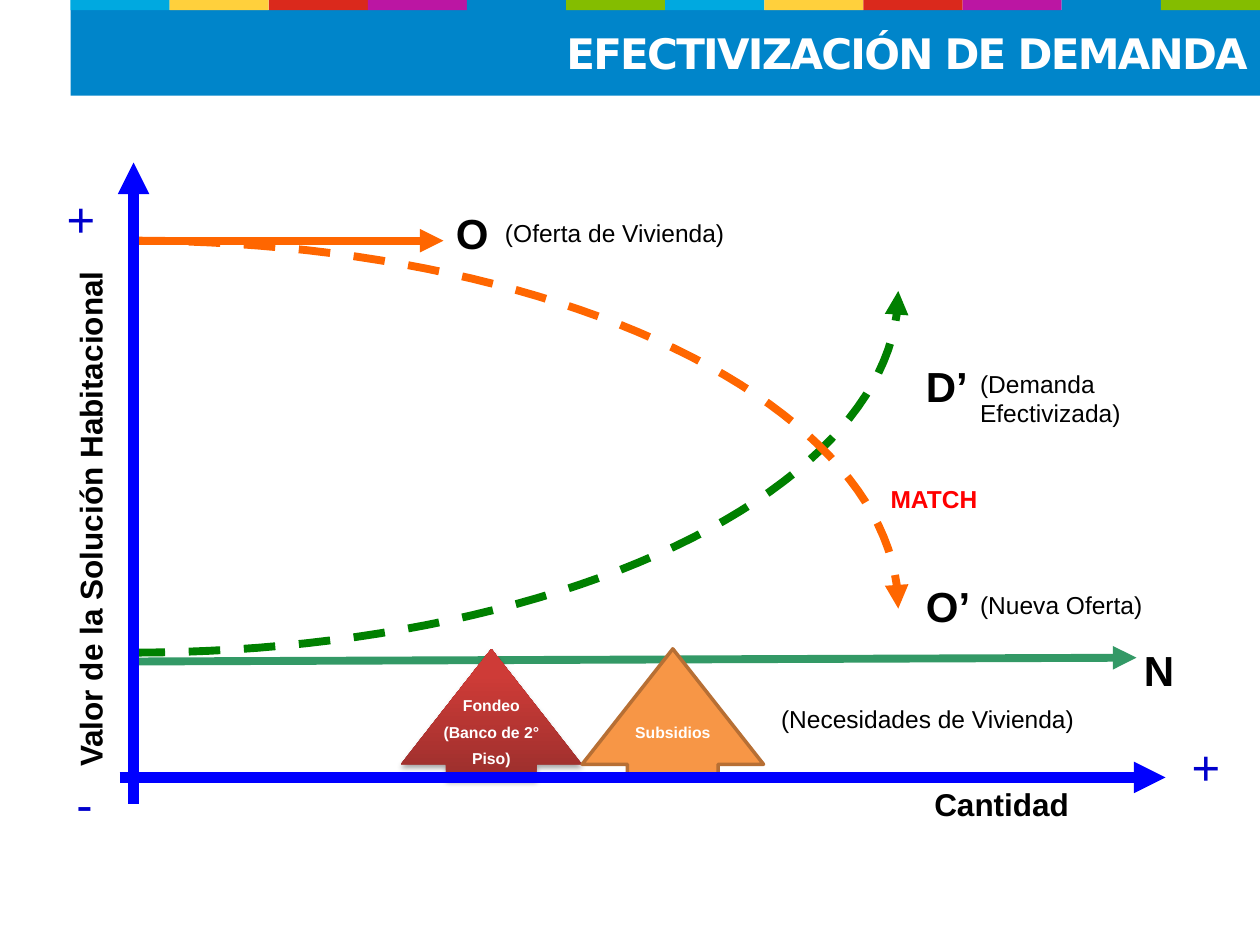
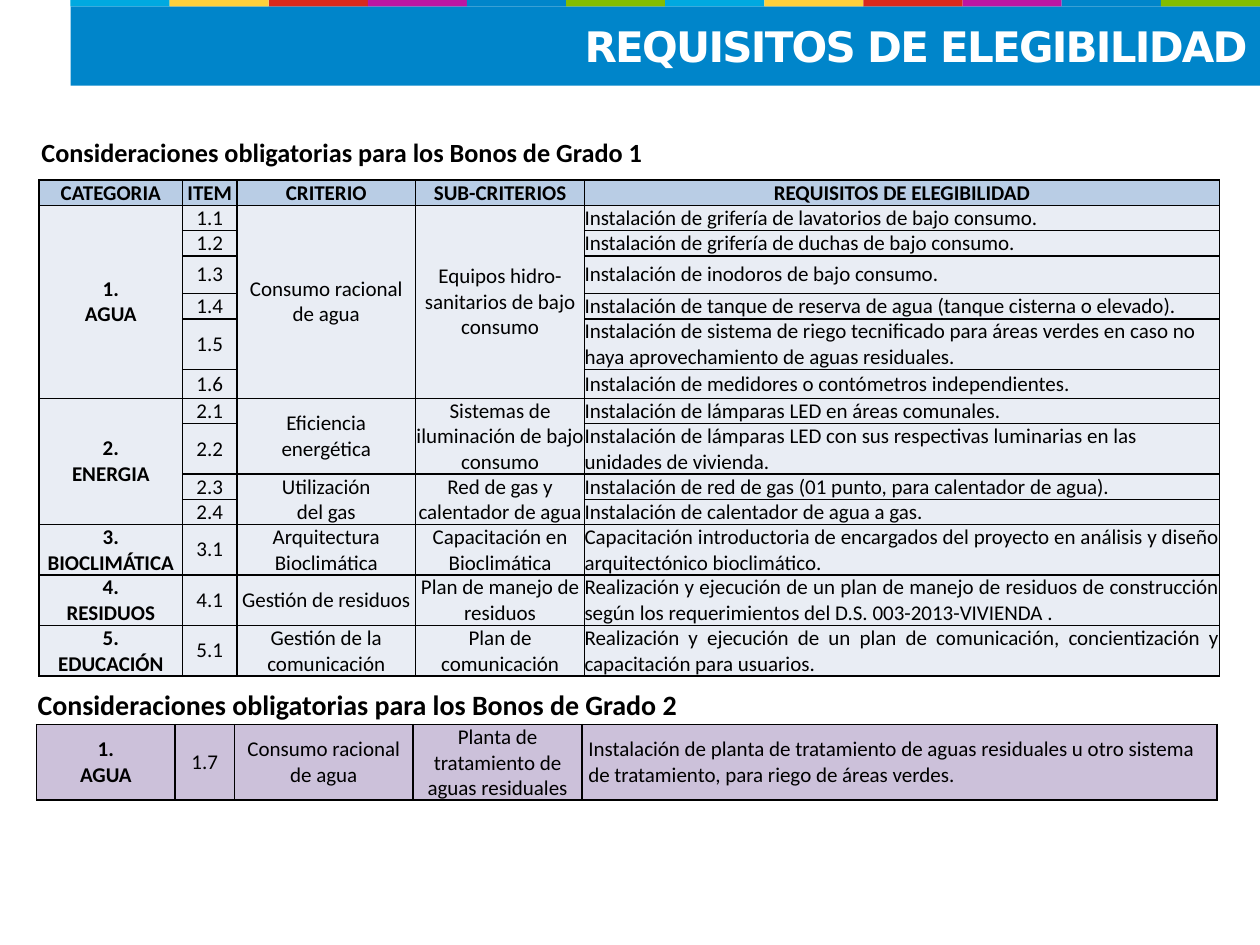
from math import cos, sin, pi
from lxml.etree import SubElement as Sub
from pptx import Presentation
from pptx.dml.color import RGBColor as Rgb
from pptx.enum.dml import MSO_LINE as Dash
from pptx.enum.shapes import MSO_CONNECTOR as Link, MSO_SHAPE as Kind
from pptx.enum.text import MSO_ANCHOR as Anchor, MSO_AUTO_SIZE as Fit, PP_ALIGN as Align
from pptx.oxml import parse_xml
from pptx.oxml.ns import qn, nsdecls
from pptx.util import Inches, Pt

BLUE, BLACK, WHITE = "0085CA", "000000", "FFFFFF"
BANDS = ["00A9E0", "FFD03C", "DA291C", "BB16A3", BLUE, "84BD00"] * 2
EDGE = 0.56
LEFT, CENTER, JUST = Align.LEFT, Align.CENTER, Align.JUSTIFY

# Slide 1: demand chart
ORIGIN = 1.06
AXIS, GREEN, ORANGE = "0000FF", "008000", "FF6600"
CURVES = [(5.18, 2.31, GREEN), (1.91, 4.83, ORANGE)]  # start y, end y, colour
TREND = [
    ((ORIGIN, 5.25), (9.02, 5.22), "339966", 4.5),
    ((ORIGIN, 1.91), (3.52, 1.91), ORANGE, 4.5),
    ((ORIGIN, 6.38), (ORIGIN, 1.29), AXIS, 6),
]
BASE = ((0.95, 6.17), (9.25, 6.17), AXIS, 6)
LETTER = dict(size=24, bold=True)
NOTE = dict(size=14)
SIGN = dict(size=28, color="0000CC")
NAME = dict(size=18, bold=True, align=CENTER)
LABELS = [
    ("O", (3.52, 1.6, 0.47, 0.5), LETTER),
    ("N", (8.98, 5.07, 0.47, 0.5), LETTER),
    ("D’", (7.25, 2.81, 0.58, 0.5), LETTER),
    ("O’", (7.25, 4.56, 0.58, 0.5), LETTER),
    ("(Oferta de Vivienda)", (3.91, 1.68, 5.53, 0.34), NOTE),
    ("(Necesidades de Vivienda)", (6.1, 5.54, 2.99, 0.34), NOTE),
    ("(Demanda Efectivizada)", (7.68, 2.88, 1.92, 0.57), NOTE),
    ("(Nueva Oferta)", (7.68, 4.63, 2.08, 0.34), NOTE),
    ("MATCH", (6.97, 3.79, 1.26, 0.34), dict(size=14, bold=True, color="FF0000")),
    ("+", (0.43, 1.45, 0.48, 0.57), SIGN),
    ("-", (0.43, 6.09, 0.48, 0.57), dict(SIGN, align=CENTER)),
    ("+", (9.36, 5.8, 0.48, 0.57), SIGN),
    ("Cantidad", (6.68, 6.18, 2.54, 0.4), NAME),
    ("Valor de la Solución Habitacional", (-1.81, 3.92, 5.05, 0.4), dict(NAME, turn=270)),
]
FUNDS, GRANTS = "Fondeo\n(Banco de 2°\nPiso)", "Subsidios"

# Slide 2: tables; an empty cell continues the one above it
HEADS = ["Consideraciones obligatorias para los Bonos de Grado 1",
         "Consideraciones obligatorias para los Bonos de Grado 2"]
GRADE1 = [
    ("CATEGORIA", "ITEM", "CRITERIO", "SUB-CRITERIOS", "REQUISITOS DE ELEGIBILIDAD"),
    ("1.\nAGUA", "1.1", "Consumo racional de agua",
     "Equipos hidro-sanitarios de bajo consumo",
     "Instalación de grifería de lavatorios de bajo consumo."),
    ("", "1.2", "", "", "Instalación de grifería de duchas de bajo consumo."),
    ("", "1.3", "", "", "Instalación de inodoros de bajo consumo."),
    ("", "1.4", "", "",
     "Instalación de tanque de reserva de agua (tanque cisterna o elevado)."),
    ("", "1.5", "", "", "Instalación de sistema de riego tecnificado para áreas verdes "
     "en caso no haya aprovechamiento de aguas residuales."),
    ("", "1.6", "", "", "Instalación de medidores o contómetros independientes."),
    ("2.\nENERGIA", "2.1", "Eficiencia\nenergética",
     "Sistemas de iluminación de bajo consumo",
     "Instalación de lámparas LED en áreas comunales."),
    ("", "2.2", "", "", "Instalación de lámparas LED con sus respectivas luminarias "
     "en las unidades de vivienda."),
    ("", "2.3", "Utilización\ndel gas", "Red de gas y calentador de agua",
     "Instalación de red de gas (01 punto, para calentador de agua)."),
    ("", "2.4", "", "", "Instalación de calentador de agua a gas."),
    ("3.\nBIOCLIMÁTICA", "3.1", "Arquitectura Bioclimática", "Capacitación en Bioclimática",
     "Capacitación introductoria de encargados del proyecto en análisis y diseño "
     "arquitectónico bioclimático."),
    ("4.\nRESIDUOS", "4.1", "Gestión de residuos", "Plan de manejo de residuos",
     "Realización y ejecución de un plan de manejo de residuos de construcción según los "
     "requerimientos del D.S. 003-2013-VIVIENDA ."),
    ("5.\nEDUCACIÓN", "5.1", "Gestión de la comunicación", "Plan de comunicación",
     "Realización y ejecución de un plan de comunicación, concientización y capacitación "
     "para usuarios."),
]
HIGH1 = [0.2, 0.2, 0.2, 0.3, 0.2, 0.4, 0.23, 0.2, 0.4, 0.2, 0.2, 0.4, 0.4, 0.4]
WIDE1 = [1.14, 0.43, 1.42, 1.34, 5.04]
GRADE2 = [
    ("1.\nAGUA", "1.7", "Consumo racional de agua",
     "Planta de tratamiento de aguas residuales",
     "Instalación de planta de tratamiento de aguas residuales u otro sistema de "
     "tratamiento, para riego de áreas verdes."),
]
WIDE2 = [1.1, 0.47, 1.42, 1.34, 5.04]


def rgb(code):
    return Rgb.from_string(code)


def inch(vals):
    return [Inches(v) for v in vals]


def style(frame, size, color=BLACK, bold=False, align=LEFT, font="Arial"):
    for para in frame.paragraphs:
        para.alignment = align
        for run in para.runs:
            run.font.size, run.font.bold, run.font.name = Pt(size), bold, font
            run.font.color.rgb = rgb(color)


def paint(shape, color):
    shape.fill.solid()
    shape.fill.fore_color.rgb = rgb(color)


def block(slide, kind, at, color):
    shape = slide.shapes.add_shape(kind, *inch(at))
    shape.shadow.inherit = False
    paint(shape, color)
    shape.line.fill.background()
    return shape


def label(slide, text, at, turn=0, **look):
    box = slide.shapes.add_textbox(*inch(at))
    box.rotation = turn
    box.text_frame.word_wrap = True
    box.text_frame.text = text
    style(box.text_frame, **look)


def start(deck, text, top, high):
    """Add a slide with the colour strip and the title bar below it."""
    slide = deck.slides.add_slide(deck.slide_layouts[5])
    step = (10 - EDGE) / len(BANDS)
    for i, color in enumerate(BANDS):
        block(slide, Kind.RECTANGLE, (EDGE + i * step, 0, step, top), color)
    title = slide.shapes.title
    title.left, title.top, title.width, title.height = inch((EDGE, top, 10 - EDGE, high))
    paint(title, BLUE)
    frame = title.text_frame
    frame.text = text
    frame.auto_size, frame.vertical_anchor = Fit.NONE, Anchor.MIDDLE
    style(frame, 24, WHITE, True, Align.RIGHT, "DejaVu Sans")
    frame.paragraphs[0].runs[0].font._element.set("spc", "-100")
    return slide


def ink(shape, color, width):
    """Colour the line and end it with an arrowhead."""
    shape.line.color.rgb = rgb(color)
    shape.line.width = Pt(width)
    Sub(shape.line._get_or_add_ln(), qn("a:tailEnd"), type="triangle")


def arrow(slide, head, tail, color, width):
    line = slide.shapes.add_connector(Link.STRAIGHT, *inch(head + tail))
    ink(line, color, width)
    Sub(line._element.spPr, qn("a:effectLst"))


def curve(slide, low, high, color, reach=6.07, steps=48):
    """Draw a dashed quarter ellipse, flat at the axis and upright at its end."""
    angles = [i * pi / 2 / steps for i in range(steps + 1)]
    dots = [inch((ORIGIN + reach * sin(a), high + (low - high) * cos(a))) for a in angles]
    path = slide.shapes.build_freeform(*dots[0])
    path.add_line_segments(dots[1:], close=False)
    shape = path.convert_to_shape()
    shape.shadow.inherit = False
    shape.fill.background()
    shape.line.dash_style = Dash.DASH
    ink(shape, color, 4.5)


def push(slide, text, left, color):
    """Add an upward block arrow with its text in the stem."""
    shape = block(slide, Kind.UP_ARROW, (left, 5.15, 1.44, 1.03), color)
    shape.adjustments[0], shape.adjustments[1] = 0.5, 0.89
    frame = shape.text_frame
    frame.text = text
    frame.word_wrap, frame.vertical_anchor = False, Anchor.MIDDLE
    frame.margin_bottom = Inches(0.22)
    style(frame, 9, WHITE, True, CENTER)
    for para in frame.paragraphs[1:]:
        para.space_before = Pt(4.5)
    return shape


def shade(shape):
    shape.fill.gradient()
    shape.fill.gradient_angle = 90
    low, high = shape.fill.gradient_stops
    low.color.rgb, high.color.rgb = rgb("9C2F2D"), rgb("CE3B37")
    high.position = 0.8
    glow = shape._element.spPr.find(qn("a:effectLst"))
    glow.append(parse_xml(
        f'<a:outerShdw {nsdecls("a")} blurRad="{Pt(3.1)}" dist="{Pt(1.8)}" dir="5400000" '
        'rotWithShape="0"><a:srgbClr val="000000"><a:alpha val="35000"/></a:srgbClr>'
        '</a:outerShdw>'))


def frame_cell(cell):
    props = cell._tc.get_or_add_tcPr()
    for side in "LRTB":
        line = Sub(props, qn(f"a:ln{side}"), w=str(Pt(1)))
        Sub(Sub(line, qn("a:solidFill")), qn("a:srgbClr"), val=BLACK)


def grid(slide, rows, at, wide, high, fill, pad=0, top=None):
    """Add a table; top is the fill of a header row, if there is one."""
    size = (sum(wide), sum(high))
    table = slide.shapes.add_table(len(rows), len(wide), *inch(at + size)).table
    table.first_row = table.horz_banding = False
    for col, width in zip(table.columns, wide):
        col.width = Inches(width)
    for row, height in zip(table.rows, high):
        row.height = Inches(height)
    for r, row in enumerate(rows):
        header = top is not None and r == 0
        for c, text in enumerate(row):
            cell = table.cell(r, c)
            frame_cell(cell)
            paint(cell, top if header else fill)
            cell.margin_left = cell.margin_right = Inches(pad)
            cell.margin_top = cell.margin_bottom = 0
            cell.vertical_anchor = Anchor.MIDDLE
            cell.text_frame.text = text
            align = CENTER
            if c == 4 and not header:
                align = JUST if row[1][0] in "345" else LEFT
            style(cell.text_frame, 12, BLACK, header or c == 0, align, "Calibri")
    for c in range(len(wide)):
        starts = [r for r, row in enumerate(rows) if row[c]] + [len(rows)]
        for first, after in zip(starts, starts[1:]):
            if after - first > 1:
                table.cell(first, c).merge(table.cell(after - 1, c))


def demand(deck):
    slide = start(deck, "EFECTIVIZACIÓN DE DEMANDA", 0.08, 0.68)
    for low, high, color in CURVES:
        curve(slide, low, high, color)
    for line in TREND:
        arrow(slide, *line)
    shade(push(slide, FUNDS, 3.18, "CB3E3A"))
    grants = push(slide, GRANTS, 4.62, "F79646")
    grants.line.color.rgb = rgb("B76F34")
    grants.line.width = Pt(2)
    arrow(slide, *BASE)
    for text, at, look in LABELS:
        label(slide, text, at, **look)


def rules(deck):
    slide = start(deck, "REQUISITOS DE ELEGIBILIDAD", 0.05, 0.63)
    head = dict(bold=True, font="Calibri")
    label(slide, HEADS[0], (0.23, 1.03, 6.81, 0.35), size=15, **head)
    grid(slide, GRADE1, (0.31, 1.43), WIDE1, HIGH1, "E9EDF4", top="B9CDE5")
    label(slide, HEADS[1], (0.2, 5.41, 6.97, 0.37), size=16, **head)
    grid(slide, GRADE2, (0.29, 5.75), WIDE2, [0.6], "CCC1DA", pad=0.05)


def main():
    deck = Presentation()
    deck.slide_width, deck.slide_height = inch((10, 7.5))
    demand(deck)
    rules(deck)
    deck.save("out.pptx")


if __name__ == "__main__":
    main()
